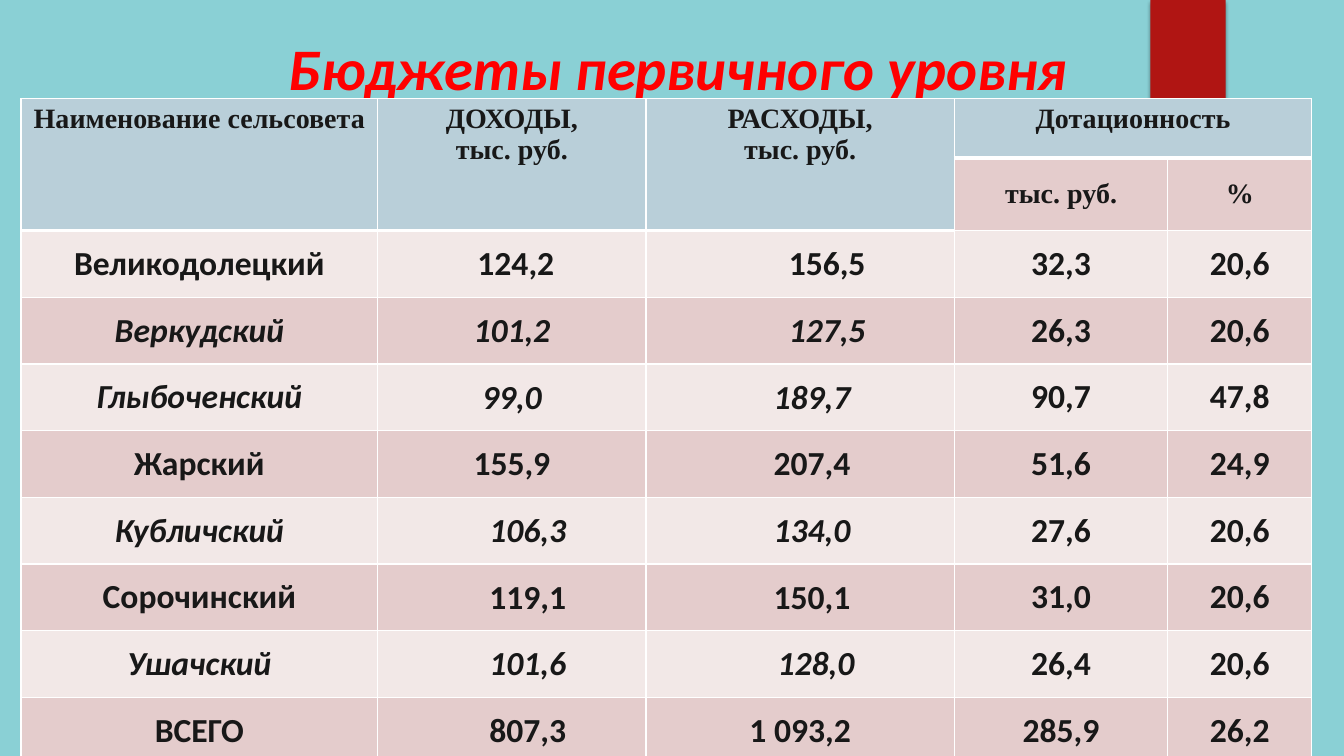
from lxml.etree import SubElement
from pptx import Presentation
from pptx.dml.color import RGBColor
from pptx.enum.shapes import MSO_SHAPE
from pptx.enum.text import MSO_ANCHOR as Anchor, PP_ALIGN as Align
from pptx.oxml.ns import qn
from pptx.util import Cm, Pt

COLORS = {"back": "8AD0D5", "ribbon": "B01513", "title": "FF0000", "text": "181818",
          "head": "B9CFD9", "dark": "E4CCCC", "light": "F2E8E7", "line": "FFFFFF",
          "shadow": "000000"}
TITLE = {"name": "Calibri", "size": Pt(42), "bold": True, "italic": True}
HEAD = {"name": "Times New Roman", "size": Pt(20), "bold": True}
BODY = {"name": "Calibri", "size": Pt(24), "bold": True}
COLUMNS = [8.99, 6.76, 7.77, 5.38, 3.63]
HEAD_ROWS = [1.5, 1.8]
BODY_ROW = 1.68
HEADERS = ["Наименование сельсовета", "ДОХОДЫ,\nтыс. руб.", "РАСХОДЫ,\nтыс. руб.",
           "Дотационность"]
SUBHEADERS = {3: "тыс. руб.", 4: "%"}
BUDGETS = [
    (["Великодолецкий", "124,2", "156,5", "32,3", "20,6"], False, (0.2, 1.36)),
    (["Веркудский", "101,2", "127,5", "26,3", "20,6"], True, (0, 1.36)),
    (["Глыбоченский", "99,0", "189,7", "90,7", "47,8"], True, (0, 0.6)),
    (["Жарский", "155,9", "207,4", "51,6", "24,9"], False, (0, 0.6)),
    (["Кубличский", "106,3", "134,0", "27,6", "20,6"], True, (0.8, 0.6)),
    (["Сорочинский", "119,1", "150,1", "31,0", "20,6"], False, (0.8, 0.6)),
    (["Ушачский", "101,6", "128,0", "26,4", "20,6"], True, (0.8, 0.8)),
    (["ВСЕГО", "807,3", "1 093,2", "285,9", "26,2"], False, (0.8, 0)),
]


def rgb(key):
    """Return the palette colour with this key."""
    return RGBColor.from_string(COLORS[key])


def write(tf, text, fmt, color):
    """Fill a text frame with centred, formatted paragraphs."""
    tf.text = text
    for p in tf.paragraphs:
        p.alignment = Align.CENTER
        for r in p.runs:
            for key, value in fmt.items():
                setattr(r.font, key, value)
            r.font.color.rgb = rgb(color)


def style_cell(cell, fill, bottom=1):
    """Give a cell white borders and a solid fill."""
    pr = cell._tc.get_or_add_tcPr()
    for side, width in {"L": 1, "R": 1, "T": 1, "B": bottom}.items():
        ln = SubElement(pr, qn(f"a:ln{side}"), w=str(Pt(width)))
        SubElement(SubElement(ln, qn("a:solidFill")), qn("a:srgbClr"), val=COLORS["line"])
    cell.fill.solid()
    cell.fill.fore_color.rgb = rgb(fill)


def add_ribbon(s, left, top, width, height):
    """Draw the ribbon hanging from the top edge."""
    sp = s.shapes.add_shape(MSO_SHAPE.RECTANGLE, left, top, width, height)
    sp.shadow.inherit = False
    sp.fill.solid()
    sp.fill.fore_color.rgb = rgb("ribbon")
    sp.line.fill.background()
    effects = sp._element.spPr.find(qn("a:effectLst"))
    shadow = SubElement(effects, qn("a:outerShdw"), blurRad=str(Pt(3)), dist=str(Pt(2)),
                        dir="5400000", rotWithShape="0")
    color = SubElement(shadow, qn("a:srgbClr"), val=COLORS["shadow"])
    SubElement(color, qn("a:alpha"), val="45000")


def add_title(s, left, top, width, height):
    """Place the slide title in its placeholder."""
    sp = s.shapes.title
    box = {"left": left, "top": top, "width": width, "height": height}
    for key, value in box.items():
        setattr(sp, key, value)
    sp.text_frame.vertical_anchor = Anchor.MIDDLE
    write(sp.text_frame, "Бюджеты первичного уровня", TITLE, "title")


def fill_header(table):
    """Fill the two header rows and merge their cells."""
    for c in range(len(COLUMNS)):
        style_cell(table.cell(0, c), "head", 3)
        if c in SUBHEADERS:
            cell = table.cell(1, c)
            style_cell(cell, "dark")
            cell.vertical_anchor = Anchor.MIDDLE
            write(cell.text_frame, SUBHEADERS[c], HEAD, "text")
        else:
            style_cell(table.cell(1, c), "head", 3)
            table.cell(0, c).merge(table.cell(1, c))
    table.cell(0, 3).merge(table.cell(0, 4))
    for c, text in enumerate(HEADERS):
        write(table.cell(0, c).text_frame, text, HEAD, "text")


def fill_body(table):
    """Fill the banded rows, shifting income and expense figures by margin."""
    for i, (values, italic, shifts) in enumerate(BUDGETS):
        for c, text in enumerate(values):
            cell = table.cell(i + len(HEAD_ROWS), c)
            style_cell(cell, "dark" if i % 2 else "light")
            cell.vertical_anchor = Anchor.MIDDLE
            if c in (1, 2):
                margins = {"left": 0.02 + shifts[c - 1], "right": 0.02, "top": 0.02, "bottom": 0}
                for side, value in margins.items():
                    setattr(cell, f"margin_{side}", Cm(value))
            write(cell.text_frame, text, BODY | {"italic": italic and c < 3}, "text")


def add_budget_table(s, left, top):
    """Build the budget table from its top left corner."""
    heights = HEAD_ROWS + [BODY_ROW] * len(BUDGETS)
    table = s.shapes.add_table(len(heights), len(COLUMNS), left, top,
                               Cm(sum(COLUMNS)), Cm(sum(heights))).table
    table.first_row = table.horz_banding = False
    for column, width in zip(table.columns, COLUMNS):
        column.width = Cm(width)
    for row, height in zip(table.rows, heights):
        row.height = Cm(height)
    fill_header(table)
    fill_body(table)


def main():
    """Build the slide and save it."""
    prs = Presentation()
    prs.slide_width, prs.slide_height = Cm(33.87), Cm(19.05)
    s = prs.slides.add_slide(prs.slide_layouts[5])
    s.background.fill.solid()
    s.background.fill.fore_color.rgb = rgb("back")
    add_ribbon(s, Cm(28.99), Cm(0), Cm(1.9), Cm(3.18))
    add_title(s, Cm(0.6), Cm(0.48), Cm(32.97), Cm(2.44))
    add_budget_table(s, Cm(0.53), Cm(2.49))
    prs.save("out.pptx")


if __name__ == "__main__":
    main()
